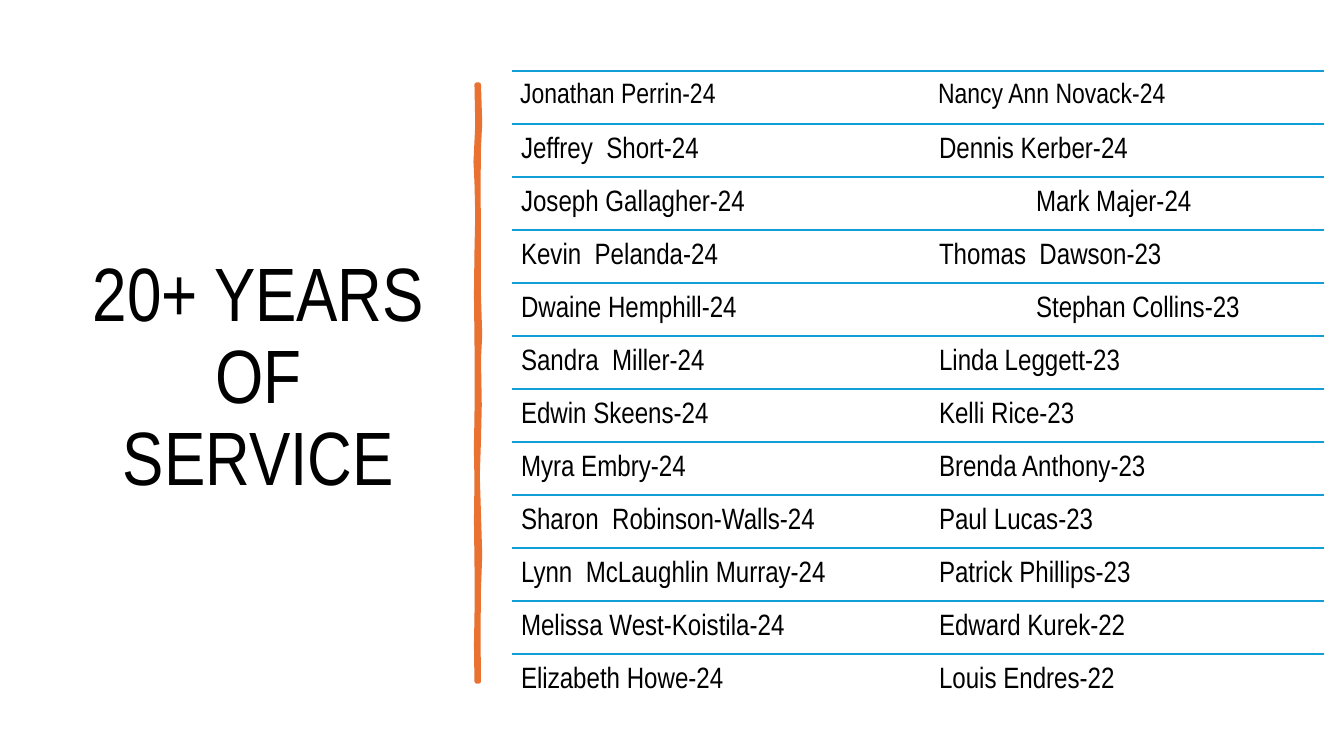
"""Build the slide that lists the staff with more than twenty years of service."""
import pptx
import pptx.dml.color
import pptx.enum.shapes
import pptx.enum.text
import pptx.util
from lxml import etree
from pptx.oxml.ns import qn

EMU_PER_PX = 914400 / 100.8
FONT = "Arial Narrow"
BLACK = pptx.dml.color.RGBColor(0x00, 0x00, 0x00)
BLUE = pptx.dml.color.RGBColor(0x0F, 0x9E, 0xD5)
ORANGE = pptx.dml.color.RGBColor(0xE9, 0x71, 0x32)

LIST_LEFT, LIST_TOP, LIST_WIDTH, ROW_HEIGHT = 512, 71, 812, 53
COLUMN_TAB, INDENTED_TAB = 418, 515

ROWS = [
    ("Jonathan Perrin-24", "Nancy Ann Novack-24", COLUMN_TAB),
    ("Jeffrey  Short-24", "Dennis Kerber-24", COLUMN_TAB),
    ("Joseph Gallagher-24", "Mark Majer-24", INDENTED_TAB),
    ("Kevin  Pelanda-24", "Thomas  Dawson-23", COLUMN_TAB),
    ("Dwaine Hemphill-24", "Stephan Collins-23", INDENTED_TAB),
    ("Sandra  Miller-24", "Linda Leggett-23", COLUMN_TAB),
    ("Edwin Skeens-24", "Kelli Rice-23", COLUMN_TAB),
    ("Myra Embry-24", "Brenda Anthony-23", COLUMN_TAB),
    ("Sharon  Robinson-Walls-24", "Paul Lucas-23", COLUMN_TAB),
    ("Lynn  McLaughlin Murray-24", "Patrick Phillips-23", COLUMN_TAB),
    ("Melissa West-Koistila-24", "Edward Kurek-22", COLUMN_TAB),
    ("Elizabeth Howe-24", "Louis Endres-22", COLUMN_TAB),
]

BAR_TENTHS = [
    (4788, 847), (4800, 1230), (4788, 1472), (4783, 1900), (4788, 2278),
    (4786, 2620), (4788, 2964), (4800, 3350), (4788, 3588), (4796, 4050),
    (4788, 4395), (4776, 4760), (4788, 5141), (4800, 5550), (4788, 5887),
    (4783, 6350), (4788, 6814), (4768, 6814), (4763, 6450), (4768, 6179),
    (4771, 5900), (4768, 5615), (4763, 5200), (4768, 4808), (4762, 4480),
    (4768, 4183), (4771, 3800), (4768, 3377), (4763, 2950), (4768, 2520),
    (4776, 2150), (4768, 1824), (4758, 1620), (4776, 1250), (4768, 847),
]


def px(length):
    """Turn pixels into EMU."""
    return pptx.util.Emu(round(length * EMU_PER_PX))


def style_paragraph(paragraph, size):
    """Give a paragraph the slide's font and line spacing."""
    paragraph.line_spacing = 0.9
    paragraph.font.name = FONT
    paragraph.font.size = pptx.util.Pt(size)
    paragraph.font.color.rgb = BLACK


def place_title(slide, text):
    """Place the centred title in the left part of the slide."""
    title = slide.shapes.title
    title.left, title.top, title.width, title.height = px(70), px(71), px(377), px(616)
    frame = title.text_frame
    frame.text = text
    frame.word_wrap = True
    frame.auto_size = pptx.enum.text.MSO_AUTO_SIZE.NONE
    frame.vertical_anchor = pptx.enum.text.MSO_ANCHOR.MIDDLE
    paragraph = frame.paragraphs[0]
    paragraph.alignment = pptx.enum.text.PP_ALIGN.CENTER
    style_paragraph(paragraph, 54)


def add_bar(slide):
    """Add the hand-drawn vertical bar."""
    builder = slide.shapes.build_freeform(*BAR_TENTHS[0], scale=EMU_PER_PX / 10)
    builder.add_line_segments(BAR_TENTHS[1:], close=True)
    bar = builder.convert_to_shape()
    bar.shadow.inherit = False
    bar.fill.solid()
    bar.fill.fore_color.rgb = ORANGE
    bar.line.color.rgb = ORANGE
    bar.line.width = pptx.util.Pt(3.25)
    outline = bar.element.spPr.find(qn("a:ln"))
    etree.SubElement(outline, qn("a:round"))


def add_rule(slide, top):
    """Add the blue line above a row."""
    rule = slide.shapes.add_connector(
        pptx.enum.shapes.MSO_CONNECTOR.STRAIGHT,
        px(LIST_LEFT), px(top), px(LIST_LEFT + LIST_WIDTH), px(top))
    rule.line.color.rgb = BLUE
    rule.line.width = pptx.util.Pt(1.5)
    etree.SubElement(rule.element.spPr, qn("a:effectLst"))


def add_names(slide, top, names, tab, size, inset):
    """Add a row of two names, the second one at a tab stop."""
    box = slide.shapes.add_textbox(
        px(LIST_LEFT), px(top), px(LIST_WIDTH), px(ROW_HEIGHT))
    frame = box.text_frame
    frame.word_wrap = True
    frame.margin_left = frame.margin_right = px(inset)
    frame.margin_top = frame.margin_bottom = px(inset)
    paragraph = frame.paragraphs[0]
    paragraph.text = "\t".join(names)
    style_paragraph(paragraph, size)
    properties = paragraph.font._element.getparent()
    stops = etree.Element(qn("a:tabLst"))
    etree.SubElement(stops, qn("a:tab"), pos=str(px(tab)), algn="l")
    properties.find(qn("a:defRPr")).addprevious(stops)


def main():
    """Build and save the slide."""
    presentation = pptx.Presentation()
    presentation.slide_width, presentation.slide_height = px(1344), px(756)
    slide = presentation.slides.add_slide(presentation.slide_layouts[5])
    place_title(slide, "20+ YEARS OF SERVICE")
    add_bar(slide)
    for index, (first, second, tab) in enumerate(ROWS):
        top = LIST_TOP + index * ROW_HEIGHT
        size, inset = (20, 8) if index == 0 else (21, 9)
        add_rule(slide, top)
        add_names(slide, top, (first, second), tab, size, inset)
    presentation.save("out.pptx")


if __name__ == "__main__":
    main()
